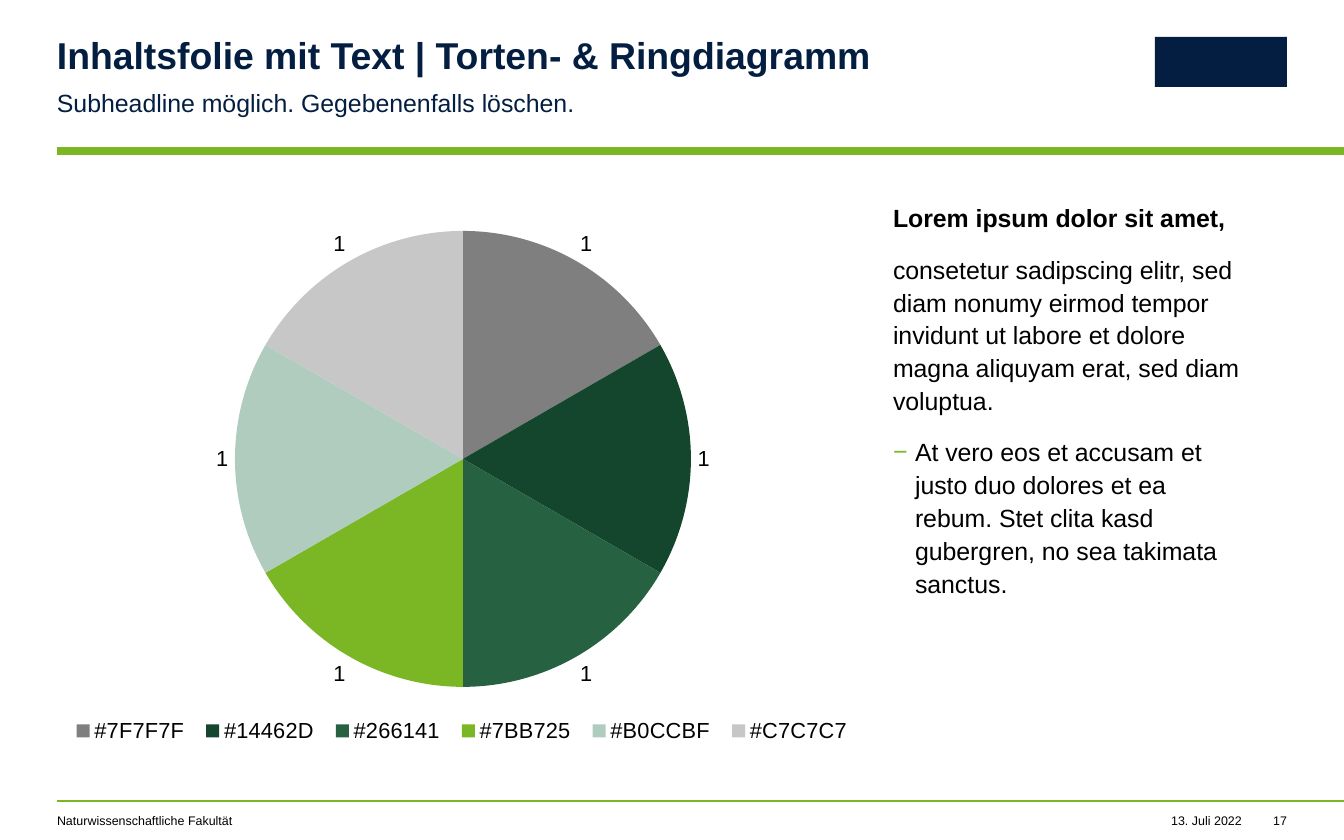
from lxml import etree
from pptx import Presentation
from pptx.chart.data import CategoryChartData
from pptx.dml.color import RGBColor
from pptx.enum.chart import XL_CHART_TYPE, XL_LABEL_POSITION, XL_LEGEND_POSITION
from pptx.enum.shapes import MSO_SHAPE
from pptx.enum.text import PP_ALIGN
from pptx.oxml import parse_xml
from pptx.oxml.ns import nsdecls, qn
from pptx.util import Emu, Pt

RECT = MSO_SHAPE.RECTANGLE
LEFT, RIGHT = PP_ALIGN.LEFT, PP_ALIGN.RIGHT
PIE = XL_CHART_TYPE.PIE
OUTSIDE = XL_LABEL_POSITION.OUTSIDE_END
BOTTOM = XL_LEGEND_POSITION.BOTTOM

FONT = "Arial"
COLORS = {"navy": "041E42", "green": "7BB725", "black": "000000"}
WIDTH, HEIGHT = 1344, 840
MARGIN = 57
CONTENT_TOP, CONTENT_HEIGHT = 199, 560

BARS = [
    ((MARGIN, 147, WIDTH - MARGIN, 8), "green"),
    ((MARGIN, 800, WIDTH - MARGIN, 2), "green"),
    ((1155, 37, 132, 50), "navy"),
]

HEADING = {"size": 24, "bold": True, "color": "navy", "line": 0.9, "after": 0}
SUBLINE = {"size": 16, "bold": False, "color": "navy", "line": 1.1, "after": 12}
BODY = {**SUBLINE, "color": "black"}
FOOTER = {"size": 8, "bold": False, "color": "black", "line": 1.0, "after": 0}

TEXTS = [
    ((MARGIN, 37, 820, 40), 0,
     [("Inhaltsfolie mit Text | Torten- & Ringdiagramm", HEADING)]),
    ((MARGIN, 85, 755, 30), 44,
     [("Subheadline möglich. Gegebenenfalls löschen.", SUBLINE)]),
    ((893, CONTENT_TOP + 1, 394, CONTENT_HEIGHT), 44, [
        ("Lorem ipsum dolor sit amet,", {**BODY, "bold": True}),
        ("consetetur sadipscing elitr, sed diam nonumy eirmod tempor invidunt "
         "ut labore et dolore magna aliquyam erat, sed diam voluptua.", BODY),
        ("At vero eos et accusam et justo duo dolores et ea rebum. Stet clita "
         "kasd gubergren, no sea takimata sanctus.", {**BODY, "bullet": "−"}),
    ]),
    ((MARGIN, 813, 603, 15), 0, [("Naturwissenschaftliche Fakultät", FOOTER)]),
    ((1142, 813, 100, 15), 0, [("13. Juli 2022", {**FOOTER, "align": RIGHT})]),
    ((1262, 813, 25, 15), 0, [("17", {**FOOTER, "align": RIGHT})]),
]

CHART_BOX = (MARGIN, CONTENT_TOP, 812, CONTENT_HEIGHT)
PIE_BOX = (235, 231, 456, 456)
LEGEND_BOX = (62, 712, 800, 38)
SLICES = [
    ("7F7F7F", 1), ("14462D", 1), ("266141", 1),
    ("7BB725", 1), ("B0CCBF", 1), ("C7C7C7", 1),
]


def px(n):
    return Emu(n * 914400 // 112)


def rgb(name):
    return RGBColor.from_string(COLORS[name])


def style_font(font, size, bold=False, color="black"):
    for key, value in {"name": FONT, "size": Pt(size), "bold": bold}.items():
        setattr(font, key, value)
    font.color.rgb = rgb(color)


def add_bar(slide, box, color):
    sp = slide.shapes.add_shape(RECT, *map(px, box))
    sp.shadow.inherit = False
    sp.fill.solid()
    sp.fill.fore_color.rgb = rgb(color)
    sp.line.fill.background()


def add_bullet(p, char):
    pPr = p._p.get_or_add_pPr()
    indent = px(22)
    pPr.set("marL", str(indent))
    pPr.set("indent", str(-indent))
    color = etree.SubElement(pPr, qn("a:buClr"))
    etree.SubElement(color, qn("a:srgbClr"), val=COLORS["green"])
    etree.SubElement(pPr, qn("a:buFont"), typeface=FONT)
    etree.SubElement(pPr, qn("a:buChar"), char=char)


def add_text(slide, box, right_inset, paragraphs):
    tf = slide.shapes.add_textbox(*map(px, box)).text_frame
    frame = {"margin_left": 0, "margin_top": 0, "margin_bottom": 0,
             "margin_right": px(right_inset), "word_wrap": True}
    for key, value in frame.items():
        setattr(tf, key, value)
    for i, (text, fmt) in enumerate(paragraphs):
        p = tf.add_paragraph() if i else tf.paragraphs[0]
        layout = {"alignment": fmt.get("align", LEFT), "line_spacing": fmt["line"],
                  "space_after": Pt(fmt["after"])}
        for key, value in layout.items():
            setattr(p, key, value)
        if "bullet" in fmt:
            add_bullet(p, fmt["bullet"])
        r = p.add_run()
        r.text = text
        style_font(r.font, fmt["size"], fmt["bold"], fmt["color"])


def place_part(part, box, index, target=""):
    left, top, width, height = CHART_BOX
    x, y, w, h = box
    shares = {"x": (x - left) / width, "y": (y - top) / height,
              "w": w / width, "h": h / height}
    modes = target + '<c:xMode val="edge"/><c:yMode val="edge"/>'
    values = "".join(f'<c:{k} val="{v:.4f}"/>' for k, v in shares.items())
    layout = parse_xml(f'<c:layout {nsdecls("c")}><c:manualLayout>{modes}{values}'
                       '</c:manualLayout></c:layout>')
    for old in part.findall(qn("c:layout")):
        part.remove(old)
    part.insert(index, layout)


def add_pie(slide):
    data = CategoryChartData()
    data.categories = [f"#{color}" for color, _ in SLICES]
    data.add_series("Series 1", [value for _, value in SLICES])
    chart = slide.shapes.add_chart(PIE, *map(px, CHART_BOX), data).chart
    chart.has_title = False
    style_font(chart.font, 10)
    chart.has_legend = True
    chart.legend.position = BOTTOM
    chart.legend.include_in_layout = False
    style_font(chart.legend.font, 14)
    plot = chart.plots[0]
    plot.vary_by_categories = True
    series = plot.series[0]
    for i, (color, _) in enumerate(SLICES):
        fmt = series.points[i].format
        fmt.fill.solid()
        fmt.fill.fore_color.rgb = RGBColor.from_string(color)
        fmt.line.fill.background()
    labels = series.data_labels
    labels.show_value = True
    labels.position = OUTSIDE
    style_font(labels.font, 14)
    root = chart._chartSpace.chart
    place_part(root.plotArea, PIE_BOX, 0, '<c:layoutTarget val="inner"/>')
    place_part(root.find(qn("c:legend")), LEGEND_BOX, 1)


def main():
    prs = Presentation()
    prs.slide_width, prs.slide_height = px(WIDTH), px(HEIGHT)
    slide = prs.slides.add_slide(prs.slide_layouts[6])
    for bar in BARS:
        add_bar(slide, *bar)
    for text in TEXTS:
        add_text(slide, *text)
    add_pie(slide)
    prs.save("out.pptx")


if __name__ == "__main__":
    main()
